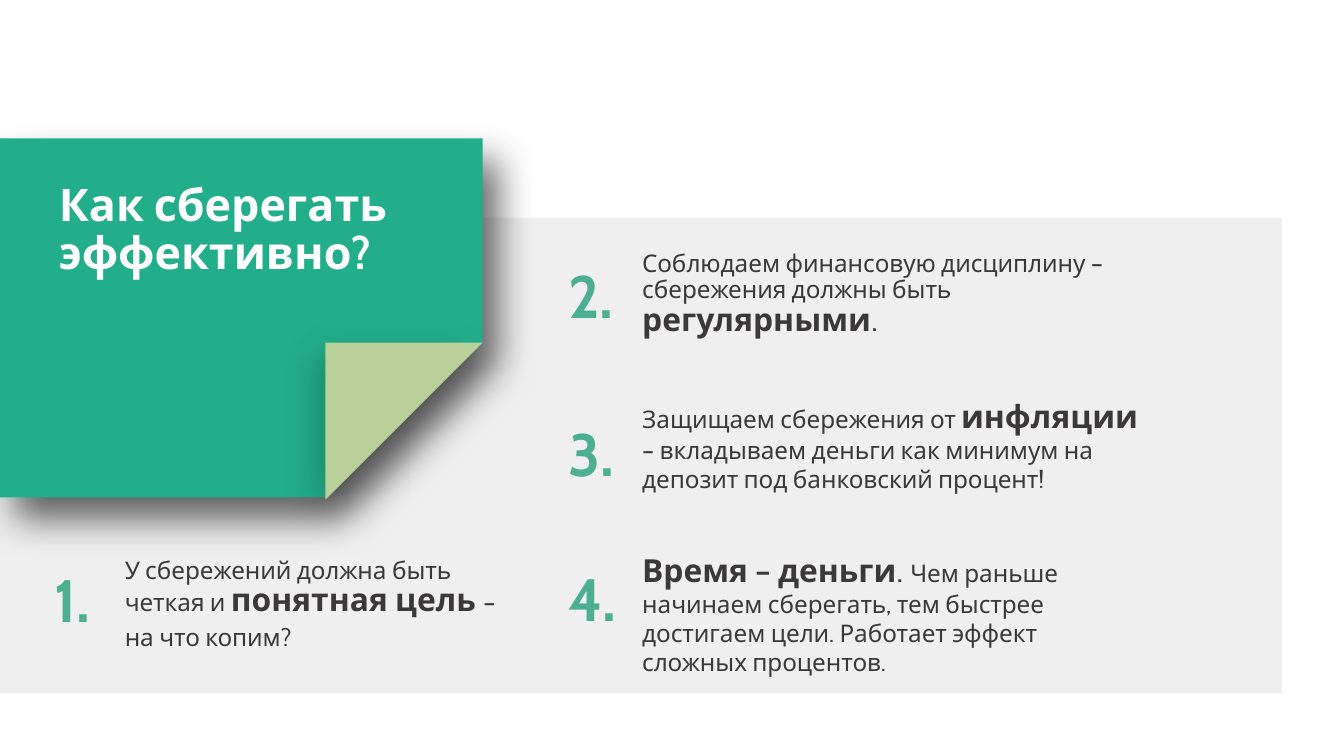
from lxml import etree
from pptx import Presentation
from pptx.dml.color import RGBColor
from pptx.enum.shapes import MSO_SHAPE
from pptx.oxml.ns import qn
from pptx.util import Inches, Pt

RECTANGLE = MSO_SHAPE.RECTANGLE
SNIPPED = MSO_SHAPE.SNIP_ROUND_RECTANGLE
TRIANGLE = MSO_SHAPE.RIGHT_TRIANGLE

FONT = "Cabin"
WHITE, GRAY, DARK = "FFFFFF", "EFEFEF", "3A3838"
GREEN, LIME, NUMBER_GREEN = "22AE8B", "B7D199", "4CAF90"
BODY, STRONG = 13, 17
ITEM_GAP = 31

# Each paragraph: (line spacing, [(text, size, bold), ...])
GOAL = [
    (1, [("У сбережений должна быть", BODY, False)]),
    (0.91, [("четкая и ", BODY, False), ("понятная цель ", STRONG, True),
            ("–", BODY, False)]),
    (1.11, [("на что копим?", BODY, False)]),
]
RULES = [
    (0.91, [("Соблюдаем финансовую дисциплину – сбережения должны быть ", BODY, False),
            ("регулярными", STRONG, True), (".", STRONG, False)]),
    (1, [("Защищаем сбережения от ", BODY, False), ("инфляции", STRONG, True),
         (" – вкладываем деньги как минимум на депозит под банковский процент!",
          BODY, False)]),
    (1, [("Время – деньги", STRONG, True), (". ", STRONG, False),
         ("Чем раньше начинаем сберегать, тем быстрее достигаем цели. "
          "Работает эффект сложных процентов.", BODY, False)]),
]


def color(value):
    return RGBColor.from_string(value)


def add_block(slide, kind, left, top, width, height, fill):
    shape = slide.shapes.add_shape(
        kind, Inches(left), Inches(top), Inches(width), Inches(height))
    shape.shadow.inherit = False
    shape.fill.solid()
    shape.fill.fore_color.rgb = color(fill)
    shape.line.fill.background()
    return shape


def add_shadow(shape, opacity, blur, distance, angle):
    """Blur and distance are in points, opacity in percent, angle in degrees."""
    effects = shape._element.spPr.find(qn("a:effectLst"))
    shadow = etree.SubElement(
        effects, qn("a:outerShdw"), blurRad=str(Pt(blur)), dist=str(Pt(distance)),
        dir=str(angle * 60000), algn="ctr", rotWithShape="0")
    shade = etree.SubElement(shadow, qn("a:srgbClr"), val="000000")
    etree.SubElement(shade, qn("a:alpha"), val=str(opacity * 1000))


def add_text(slide, left, top, width, height, paragraphs, text_color, gap=0):
    box = slide.shapes.add_textbox(
        Inches(left), Inches(top), Inches(width), Inches(height))
    frame = box.text_frame
    frame.word_wrap = True
    for index, (line_spacing, runs) in enumerate(paragraphs):
        paragraph = frame.add_paragraph() if index else frame.paragraphs[0]
        paragraph.line_spacing = line_spacing
        paragraph.space_before = Pt(gap if index else 0)
        for text, size, bold in runs:
            run = paragraph.add_run()
            run.text = text
            run.font.name = FONT
            run.font.size = Pt(size)
            run.font.bold = bold
            run.font.color.rgb = color(text_color)


def add_title_note(slide, left, top, width, height):
    """Sheet with a folded lower right corner, carrying the title."""
    fold = 1.17
    sheet = add_block(slide, SNIPPED, left, top, width, height, GREEN)
    sheet.adjustments[0] = 0
    sheet.adjustments[1] = 0.433
    sheet.rotation = 180
    sheet._element.spPr.find(qn("a:xfrm")).set("flipH", "1")
    add_shadow(sheet, 60, 20, 14, 55)

    corner = add_block(slide, TRIANGLE, left + width - fold, top + 1.52,
                       fold, fold, LIME)
    corner.rotation = 90
    add_shadow(corner, 22, 19, 8, 125)

    add_text(slide, left + 0.34, top + 0.28, 2.82, 1.49,
             [(0.9, [("Как сберегать эффективно?", 24, True)])], WHITE)


def add_number(slide, number, left, top):
    add_text(slide, left, top, 1.06, 0.64,
             [(1, [(f"{number}.", 32, True)])], NUMBER_GREEN)


def add_goal(slide, left, top):
    add_number(slide, 1, left, top + 0.06)
    add_text(slide, left + 0.52, top, 3.55, 1.6, GOAL, DARK)


def add_rules(slide, left, top):
    for number, offset in enumerate((0.06, 1.23, 2.31), start=2):
        add_number(slide, number, left, top + offset)
    add_text(slide, left + 0.55, top, 3.93, 3.71, RULES, DARK, ITEM_GAP)


def main():
    presentation = Presentation()
    presentation.slide_width = Inches(10)
    presentation.slide_height = presentation.slide_width * 9 // 16
    slide = presentation.slides.add_slide(presentation.slide_layouts[6])
    add_block(slide, RECTANGLE, 0, 1.62, 9.54, 3.54, GRAY)
    add_title_note(slide, 0, 1.03, 3.59, 2.67)
    add_goal(slide, 0.31, 4.08)
    add_rules(slide, 4.13, 1.82)
    presentation.save("out.pptx")


if __name__ == "__main__":
    main()
